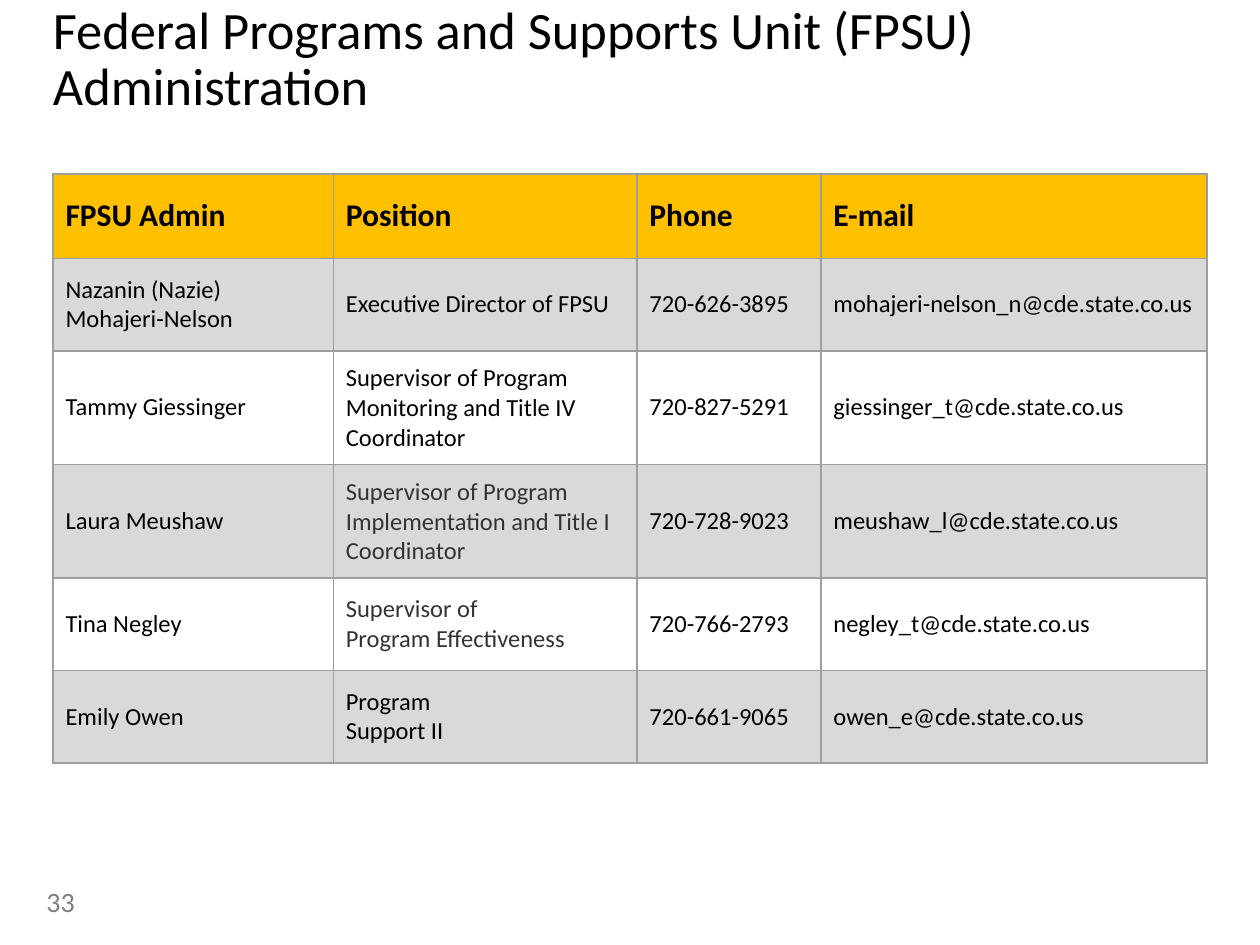
from pptx import Presentation
from pptx.dml.color import RGBColor
from pptx.enum.text import MSO_ANCHOR, MSO_AUTO_SIZE, PP_ALIGN
from pptx.oxml.ns import qn
from pptx.util import Inches, Pt
from lxml import etree

TOP, MIDDLE = MSO_ANCHOR.TOP, MSO_ANCHOR.MIDDLE
NO_FIT = MSO_AUTO_SIZE.NONE
LEFT = PP_ALIGN.LEFT
TITLE_ONLY = 5

HEADINGS = ["FPSU Admin", "Position", "Phone", "E-mail"]
STAFF = [
    ["Nazanin (Nazie) Mohajeri-Nelson", "Executive Director of FPSU",
     "720-626-3895", "mohajeri-nelson_n@cde.state.co.us"],
    ["Tammy Giessinger", "Supervisor of Program Monitoring and Title IV Coordinator",
     "720-827-5291", "giessinger_t@cde.state.co.us"],
    ["Laura Meushaw", "Supervisor of Program Implementation and Title I Coordinator",
     "720-728-9023", "meushaw_l@cde.state.co.us"],
    ["Tina Negley", "Supervisor of\nProgram Effectiveness",
     "720-766-2793", "negley_t@cde.state.co.us"],
    ["Emily Owen", "Program\nSupport II",
     "720-661-9065", "owen_e@cde.state.co.us"],
]
SOFT_POSITIONS = {"Laura Meushaw", "Tina Negley"}


def color(code):
    return RGBColor.from_string(code)


class Deck:
    font = "Calibri"
    ink, soft_ink, muted = "000000", "333333", "7F7F7F"
    header_fill, band_fill, border = "FFC000", "D9D9D9", "9E9E9E"
    columns, rows = 100, 75

    def __init__(self, width, height):
        self.presentation = Presentation()
        self.presentation.slide_width = Inches(width)
        self.presentation.slide_height = Inches(height)
        self.column = self.presentation.slide_width / self.columns
        self.row = self.presentation.slide_height / self.rows
        layout = self.presentation.slide_layouts[TITLE_ONLY]
        self.slide = self.presentation.slides.add_slide(layout)

    def area(self, left, top, width, height):
        return (round(left * self.column), round(top * self.row),
                round(width * self.column), round(height * self.row))

    def set_text(self, frame, text, size, ink, bold=False):
        frame.text = text
        for paragraph in frame.paragraphs:
            paragraph.alignment = LEFT
            for run in paragraph.runs:
                run.font.name = self.font
                run.font.size = Pt(size)
                run.font.bold = bold
                run.font.color.rgb = color(ink)

    def title(self, text, *area):
        title = self.slide.shapes.title
        title.left, title.top, title.width, title.height = self.area(*area)
        frame = title.text_frame
        self.set_text(frame, text, 30, self.ink)
        frame.paragraphs[0].line_spacing = 0.9
        frame.margin_left = frame.margin_right = 0
        frame.margin_top = frame.margin_bottom = 0
        frame.vertical_anchor = TOP
        frame.auto_size = NO_FIT
        frame.word_wrap = True

    def page_number(self, number, *area):
        frame = self.slide.shapes.add_textbox(*self.area(*area)).text_frame
        self.set_text(frame, number, 16, self.muted)
        frame.vertical_anchor = MIDDLE
        frame.word_wrap = True

    def outline(self, cell):
        properties = cell._tc.get_or_add_tcPr()
        for index, side in enumerate(("a:lnL", "a:lnR", "a:lnT", "a:lnB")):
            line = etree.Element(qn(side), w=str(Pt(1)))
            fill = etree.SubElement(line, qn("a:solidFill"))
            etree.SubElement(fill, qn("a:srgbClr"), val=self.border)
            properties.insert(index, line)

    def cell(self, cell, text, size, ink, fill, bold):
        self.set_text(cell.text_frame, text, size, ink, bold)
        cell.vertical_anchor = MIDDLE
        cell.margin_left = cell.margin_right = Inches(0.1)
        cell.margin_top = cell.margin_bottom = Inches(0.1)
        if fill:
            cell.fill.solid()
            cell.fill.fore_color.rgb = color(fill)
        else:
            cell.fill.background()
        self.outline(cell)

    def directory(self, headings, staff, left, top, widths, header_height, row_height):
        height = header_height + row_height * len(staff)
        table = self.slide.shapes.add_table(
            len(staff) + 1, len(headings),
            *self.area(left, top, sum(widths), height)).table
        table.horz_banding = False
        for column, width in zip(table.columns, widths):
            column.width = round(width * self.column)
        for index, (row, entry) in enumerate(zip(table.rows, [headings, *staff])):
            header = index == 0
            row.height = round((header_height if header else row_height) * self.row)
            band = self.band_fill if index % 2 else None
            fill = self.header_fill if header else band
            for heading, cell, text in zip(headings, row.cells, entry):
                soft = heading == "Position" and entry[0] in SOFT_POSITIONS
                ink = self.soft_ink if soft else self.ink
                self.cell(cell, text, 18 if header else 14, ink, fill, header)


def main():
    deck = Deck(10, 7.5)
    deck.title("Federal Programs and Supports Unit (FPSU)\vAdministration",
               4.2, 0.3, 95.8, 9.8)
    deck.page_number("33", 2.7, 69.5, 22.5, 4)
    deck.directory(HEADINGS, STAFF, 4.2, 13.8, [22.25, 24.1, 14.6, 30.65], 6.7, 7.35)
    deck.presentation.save("out.pptx")


if __name__ == "__main__":
    main()
